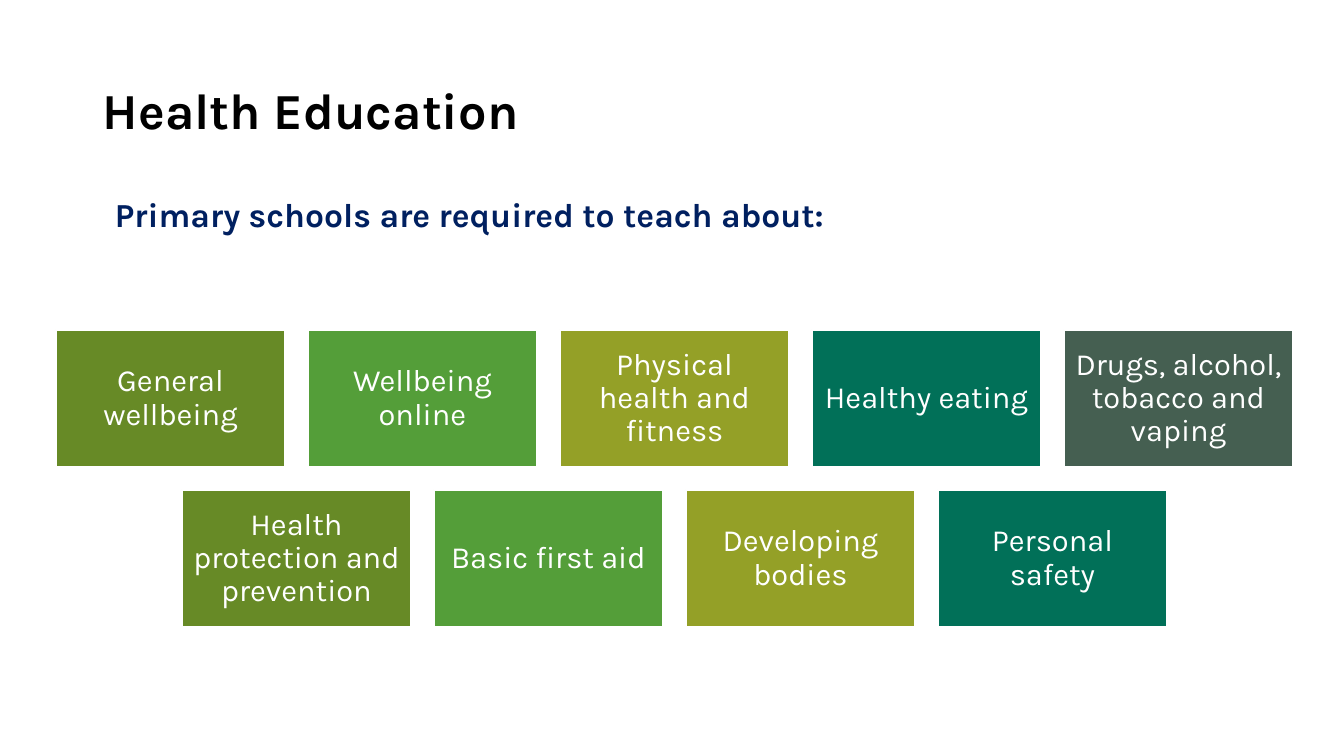
from pptx import Presentation
from pptx.dml.color import RGBColor
from pptx.enum.shapes import MSO_SHAPE
from pptx.enum.text import MSO_ANCHOR, PP_ALIGN
from pptx.util import Pt

SCALE = 914400 / 100.8
INK = {
    "black": "000000", "navy": "002060", "white": "FFFFFF",
    "olive": "678A26", "green": "549E39", "lime": "94A027",
    "teal": "017058", "slate": "455F51",
}
TILES = ["olive", "green", "lime", "teal", "slate"]
WIDE, HIGH, STEP = 229, 137, 252
ROWS = [
    (56, 330, ["General wellbeing", "Wellbeing online",
               "Physical health and fitness", "Healthy eating",
               "Drugs, alcohol, tobacco and vaping"]),
    (182, 490, ["Health protection and prevention", "Basic first aid",
                "Developing bodies", "Personal safety"]),
]
TILE = {"size": Pt(22), "bold": False}
HEAD = {"size": Pt(36), "bold": True}
LEAD = {"size": Pt(24), "bold": True}


def emu(*sizes):
    """Turn px lengths into EMU."""
    return [round(size * SCALE) for size in sizes]


def apply(item, style):
    """Set each attribute named in a style."""
    for name, value in style.items():
        setattr(item, name, value)


def color(name):
    """Give the named colour."""
    return RGBColor.from_string(INK[name])


def write(shape, text, ink, font, anchor, align):
    """Fill a shape with one formatted paragraph."""
    apply(shape.text_frame, {"word_wrap": True, "vertical_anchor": anchor})
    para = shape.text_frame.paragraphs[0]
    apply(para, {"text": text, "alignment": align, "line_spacing": 0.9})
    apply(para.font, {"name": "Karla", **font})
    para.font.color.rgb = color(ink)


def label(slide, box, text, ink, font, anchor):
    """Add a line of left-aligned text."""
    shape = slide.shapes.add_textbox(*emu(*box))
    write(shape, text, ink, font, anchor, PP_ALIGN.LEFT)


def tile(slide, left, top, text, fill):
    """Add a coloured topic tile."""
    shape = slide.shapes.add_shape(
        MSO_SHAPE.RECTANGLE, *emu(left, top, WIDE, HIGH))
    shape.shadow.inherit = False
    shape.fill.solid()
    shape.fill.fore_color.rgb = color(fill)
    shape.line.color.rgb = color("white")
    shape.line.width = Pt(1.5)
    pad = emu(9)[0]
    sides = ["left", "right", "top", "bottom"]
    apply(shape.text_frame, {f"margin_{side}": pad for side in sides})
    write(shape, text, "white", TILE, MSO_ANCHOR.MIDDLE, PP_ALIGN.CENTER)


def main():
    """Build and save the slide."""
    deck = Presentation()
    deck.slide_width, deck.slide_height = emu(1344, 756)
    slide = deck.slides.add_slide(deck.slide_layouts[6])
    label(slide, (105, 193, 1188, 47),
          "Primary schools are required to teach about:",
          "navy", LEAD, MSO_ANCHOR.BOTTOM)
    label(slide, (93, 40, 1159, 146), "Health Education",
          "black", HEAD, MSO_ANCHOR.MIDDLE)
    for left, top, topics in ROWS:
        for col, (text, fill) in enumerate(zip(topics, TILES)):
            tile(slide, left + col * STEP, top, text, fill)
    deck.save("out.pptx")


if __name__ == "__main__":
    main()
